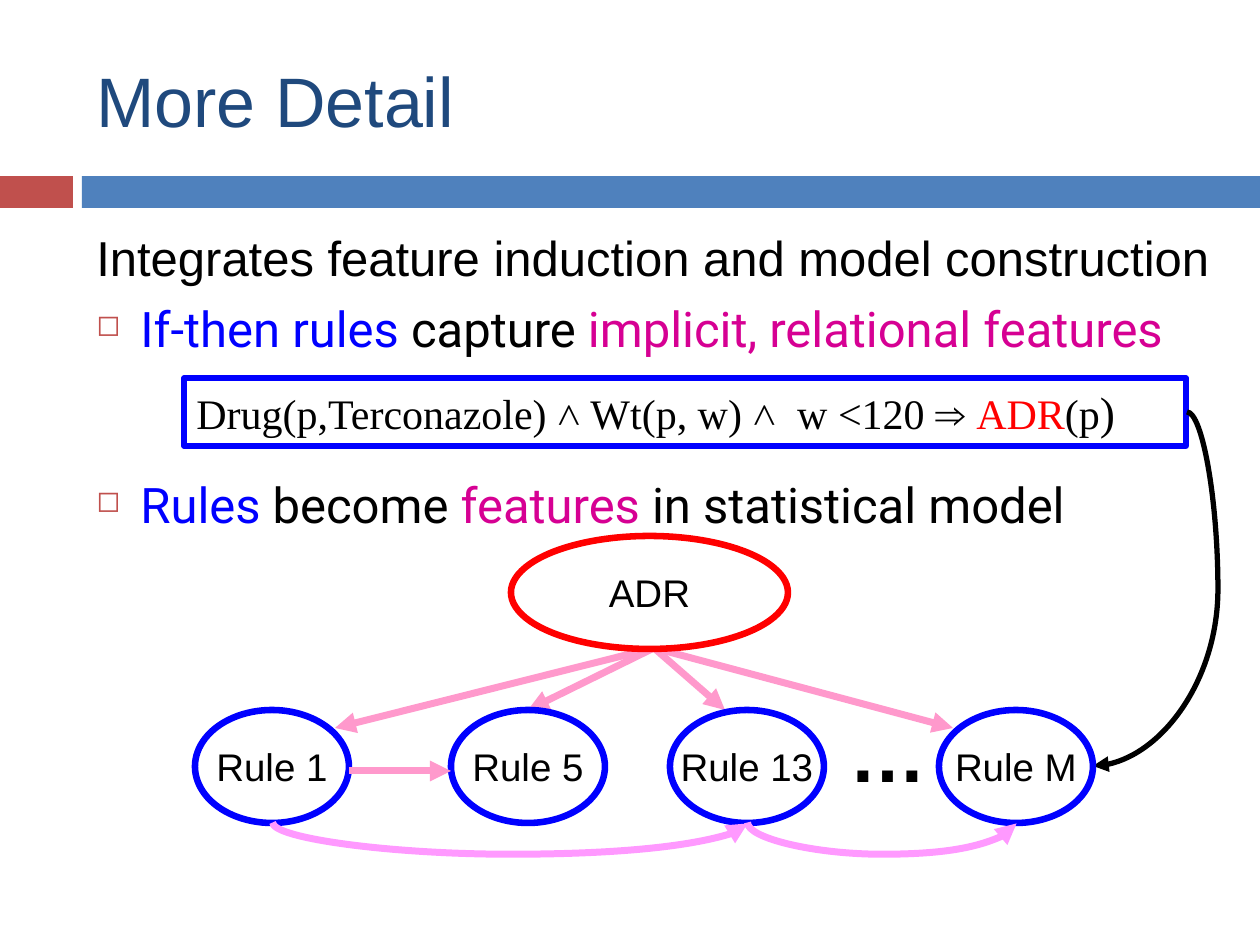
import pptx
import pptx.util
import pptx.dml.color
import pptx.enum.shapes
import pptx.enum.text
import pptx.oxml
import pptx.oxml.ns

PX = 914400 / 126
BLACK, WHITE, BLUE, RED = "000000", "FFFFFF", "0000FF", "FF0000"
MAGENTA, PINK, ORCHID, BRICK = "D60093", "FF99CC", "FF99FF", "C0504D"
RECTANGLE = pptx.enum.shapes.MSO_SHAPE.RECTANGLE
OVAL = pptx.enum.shapes.MSO_SHAPE.OVAL
STRAIGHT = pptx.enum.shapes.MSO_CONNECTOR.STRAIGHT
CURVE = pptx.enum.shapes.MSO_CONNECTOR.CURVE
CENTER = pptx.enum.text.PP_ALIGN.CENTER
LEFT = pptx.enum.text.PP_ALIGN.LEFT
MIDDLE = pptx.enum.text.MSO_ANCHOR.MIDDLE
TOP = pptx.enum.text.MSO_ANCHOR.TOP


def emu(*lengths):
    return [pptx.util.Emu(round(length * PX)) for length in lengths]


def color(value):
    return pptx.dml.color.RGBColor.from_string(value)


def add_xml(parent, tag, **attributes):
    element = pptx.oxml.parse_xml(f"<{tag} {pptx.oxml.ns.nsdecls('a')}/>")
    for name, value in attributes.items():
        element.set(name, str(value))
    parent.append(element)
    return element


def style(font, size, name, value, bold=False):
    font.size, font.name, font.bold = pptx.util.Pt(size), name, bold
    font.color.rgb = color(value)


def add_runs(paragraph, runs):
    for text, value in runs:
        run = paragraph.add_run()
        run.text = text
        run.font.color.rgb = color(value)


def add_box(slide, kind, box, fill=None, line=None, width=0):
    shape = slide.shapes.add_shape(kind, *emu(*box))
    shape.shadow.inherit = False
    if fill:
        shape.fill.solid()
        shape.fill.fore_color.rgb = color(fill)
    else:
        shape.fill.background()
    if line:
        shape.line.color.rgb = color(line)
        shape.line.width = pptx.util.Pt(width)
    else:
        shape.line.fill.background()
    return shape


def add_node(slide, box, text, line):
    shape = add_box(slide, OVAL, box, WHITE, line, 3.75)
    frame = shape.text_frame
    frame.word_wrap = False
    frame.vertical_anchor = MIDDLE
    paragraph = frame.paragraphs[0]
    paragraph.text = text
    paragraph.alignment = CENTER
    style(paragraph.font, 22, "Arial", BLACK)


def add_arrow(slide, kind, start, end, value, width):
    connector = slide.shapes.add_connector(kind, *emu(*start, *end))
    connector.line.color.rgb = color(value)
    connector.line.width = pptx.util.Pt(width)
    add_xml(connector.line._get_or_add_ln(), "a:tailEnd", type="triangle")
    add_xml(connector._element.spPr, "a:effectLst")
    return connector


def bend(connector, ratio):
    geometry = connector._element.spPr.find(pptx.oxml.ns.qn("a:prstGeom"))
    guides = geometry.find(pptx.oxml.ns.qn("a:avLst"))
    if guides is None:
        guides = add_xml(geometry, "a:avLst")
    add_xml(guides, "a:gd", name="adj1", fmla=f"val {round(ratio * 100000)}")


def add_hanging_arrow(slide, left, right, y, depth):
    middle, half = (left + right) / 2, (right - left) / 2
    connector = add_arrow(slide, CURVE, (middle + 1, y - half),
                          (middle, y + half), ORCHID, 4)
    connector._element.spPr.find(pptx.oxml.ns.qn("a:xfrm")).set("rot", "16200000")
    bend(connector, depth)


def add_title(slide, text):
    title = slide.shapes.title
    title.left, title.top, title.width, title.height = emu(84, 32, 1124, 136)
    frame = title.text_frame
    frame.text = text
    frame.auto_size = pptx.enum.text.MSO_AUTO_SIZE.NONE
    frame.vertical_anchor = MIDDLE
    frame.paragraphs[0].alignment = LEFT
    style(frame.paragraphs[0].font, 40, "Arial", "1F497D")


def add_body(slide):
    frame = slide.shapes.add_textbox(*emu(84, 221, 1154, 320)).text_frame
    frame.word_wrap = True
    heading = frame.paragraphs[0]
    heading.text = "Integrates feature induction and model construction"
    heading.space_before = pptx.util.Pt(7)
    style(heading.font, 28, "Arial", BLACK)
    bullets = [
        (7, [("If-then rules ", BLUE), ("capture ", BLACK),
             ("implicit, relational features", MAGENTA)]),
        (67, [("Rules", BLUE), (" become", BLACK), (" features ", MAGENTA),
              ("in statistical model", BLACK)]),
    ]
    for gap, runs in bullets:
        paragraph = frame.add_paragraph()
        paragraph.space_before = pptx.util.Pt(gap)
        style(paragraph.font, 28, "Roboto", BLACK)
        add_runs(paragraph, runs)
        properties = paragraph._element.get_or_add_pPr()
        indent = emu(44)[0]
        properties.set("marL", str(indent))
        properties.set("indent", str(-indent))
        bullet_parts = [
            add_xml(properties, "a:buClr"),
            add_xml(properties, "a:buSzPct", val=60000),
            add_xml(properties, "a:buChar", char="◻"),
        ]
        add_xml(bullet_parts[0], "a:srgbClr", val=BRICK)
        defaults = properties.find(pptx.oxml.ns.qn("a:defRPr"))
        for part in bullet_parts:
            defaults.addprevious(part)


def add_rule_box(slide):
    shape = add_box(slide, RECTANGLE, (184, 378, 1002, 68), None, BLUE, 3)
    frame = shape.text_frame
    frame.word_wrap = True
    frame.vertical_anchor = TOP
    paragraph = frame.paragraphs[0]
    paragraph.alignment = LEFT
    style(paragraph.font, 24, "Times New Roman", BLACK)
    add_runs(paragraph, [("Drug(p,Terconazole) ˄ Wt(p, w) ˄  w <120 ⇒ ", BLACK),
                         ("ADR", RED), ("(p", BLACK), (")", BLACK)])
    paragraph.runs[-1].font.size = pptx.util.Pt(26)


def add_network(slide):
    width, height, top = 154, 113, 710
    rules = {"Rule 1": 195, "Rule 5": 451, "Rule 13": 670, "Rule M": 939}
    for target in [(335, 728), (528, 710), (725, 710), (953, 728)]:
        add_arrow(slide, STRAIGHT, (654, 648), target, PINK, 4)
    add_node(slide, (511, 536, 277, 113), "ADR", RED)
    for name, left in rules.items():
        add_node(slide, (left, top, width, height), name, BLUE)

    frame = slide.shapes.add_textbox(*emu(810, 699, 156, 100)).text_frame
    frame.word_wrap = True
    paragraph = frame.paragraphs[0]
    paragraph.text = "…"
    paragraph.alignment = CENTER
    style(paragraph.font, 44, "Arial", BLACK, True)

    first, _, third, last = [left + width / 2 for left in rules.values()]
    add_hanging_arrow(slide, first, third, top + height, 32)
    add_hanging_arrow(slide, third, last, top + height, 32)
    add_arrow(slide, STRAIGHT, (rules["Rule 1"] + width, 771),
              (rules["Rule 5"], 771), PINK, 4)


def main():
    presentation = pptx.Presentation()
    presentation.slide_width, presentation.slide_height = emu(1260, 945)
    slide = presentation.slides.add_slide(presentation.slide_layouts[5])
    add_box(slide, RECTANGLE, (0, 176, 73, 32), BRICK)
    add_box(slide, RECTANGLE, (82, 176, 1178, 32), "4F81BD")
    add_title(slide, "More Detail")
    add_body(slide)
    add_rule_box(slide)
    bend(add_arrow(slide, CURVE, (1187, 412), (1093, 766), BLACK, 3), -0.33)
    add_network(slide)
    presentation.save("out.pptx")


if __name__ == "__main__":
    main()
